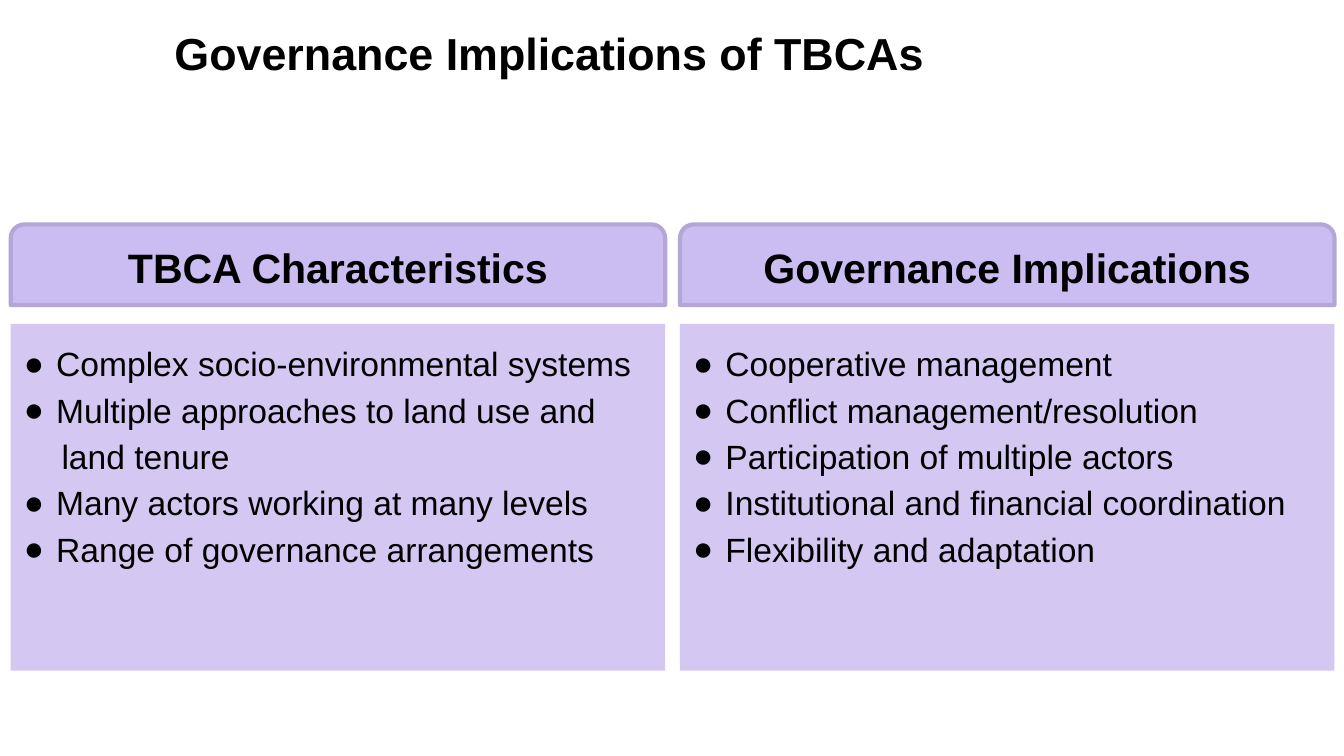
from lxml.etree import SubElement
from pptx import Presentation
from pptx.dml.color import RGBColor
from pptx.enum.shapes import MSO_SHAPE as Shape
from pptx.enum.text import MSO_ANCHOR as Anchor, PP_ALIGN as Align
from pptx.oxml.ns import qn
from pptx.util import Inches, Pt

COLORS = {
    "text": "000000",
    "title": "FFFFFF",
    "header": "CBBCF2",
    "border": "B4A7D6",
    "body": "C7B8EE",
}
COLUMNS = [
    ("TBCA Characteristics", [
        ("Complex socio-environmental systems", True),
        ("Multiple approaches to land use and", True),
        ("land tenure", False),
        ("Many actors working at many levels", True),
        ("Range of governance arrangements", True),
    ]),
    ("Governance Implications", [
        ("Cooperative management", True),
        ("Conflict management/resolution", True),
        ("Participation of multiple actors", True),
        ("Institutional and financial coordination", True),
        ("Flexibility and adaptation", True),
    ]),
]
HEADER_HEIGHT = 0.6
BODY_OFFSET = 0.74
BULLET_INDENT = 0.24
CONTINUATION_INDENT = 0.28


def color(name):
    return RGBColor.from_string(COLORS[name])


def add_box(page, kind, left, top, width, height, fill, opacity=100):
    box = page.shapes.add_shape(
        kind, Inches(left), Inches(top), Inches(width), Inches(height))
    box.shadow.inherit = False
    box.fill.solid()
    box.fill.fore_color.rgb = color(fill)
    if opacity < 100:
        tint = box.fill._xPr.find(qn("a:solidFill"))[0]
        SubElement(tint, qn("a:alpha"), val=str(opacity * 1000))
    box.line.fill.background()
    frame = box.text_frame
    frame.word_wrap = True
    frame.vertical_anchor = Anchor.TOP
    frame.margin_left = frame.margin_right = Inches(0.1)
    frame.margin_top = frame.margin_bottom = Inches(0.1)
    return box


def write(para, text, size, bold=False, align=Align.LEFT):
    para.text = text
    para.alignment = align
    para.font.name = "Arial"
    para.font.size = Pt(size)
    para.font.bold = bold
    para.font.color.rgb = color("text")


def set_indent(para, bulleted):
    props = para._p.get_or_add_pPr()
    indent = BULLET_INDENT if bulleted else CONTINUATION_INDENT
    props.set("marL", str(Inches(indent)))
    props.set("indent", str(-Inches(indent) if bulleted else 0))
    if bulleted:
        tint = SubElement(props, qn("a:buClr"))
        SubElement(tint, qn("a:srgbClr"), val=COLORS["text"])
        SubElement(props, qn("a:buFont"), typeface="Arial")
        SubElement(props, qn("a:buChar"), char="●")


def add_title(page, left, top, width, height):
    box = add_box(page, Shape.RECTANGLE, left, top, width, height, "title", 55)
    box.text_frame.margin_top = box.text_frame.margin_bottom = Inches(0.05)
    write(box.text_frame.paragraphs[0], "Governance Implications of TBCAs", 24, True)


def add_column(page, left, top, width, height, heading, items):
    body = add_box(page, Shape.RECTANGLE, left, top + BODY_OFFSET,
                   width, height - BODY_OFFSET, "body", 76)
    frame = body.text_frame
    for index, (text, bulleted) in enumerate(items):
        para = frame.add_paragraph() if index else frame.paragraphs[0]
        para.line_spacing = 1.15
        set_indent(para, bulleted)
        write(para, text, 18)

    header = add_box(page, Shape.ROUND_2_SAME_RECTANGLE, left, top,
                     width, HEADER_HEIGHT, "header")
    header.adjustments[0] = 0.17
    header.adjustments[1] = 0
    header.line.color.rgb = color("border")
    header.line.width = Pt(2.25)
    header.text_frame.vertical_anchor = Anchor.MIDDLE
    write(header.text_frame.paragraphs[0], heading, 22, True, Align.CENTER)


def main():
    deck = Presentation()
    deck.slide_width = Inches(10)
    deck.slide_height = deck.slide_width * 9 // 16
    page = deck.slides.add_slide(deck.slide_layouts[6])
    width, gap = 4.87, 0.11
    for index, (heading, items) in enumerate(COLUMNS):
        left = 0.08 + index * (width + gap)
        add_column(page, left, 1.67, width, 3.32, heading, items)
    add_title(page, 1.2, 0.14, 8.8, 0.5)
    deck.save("out.pptx")


if __name__ == "__main__":
    main()
